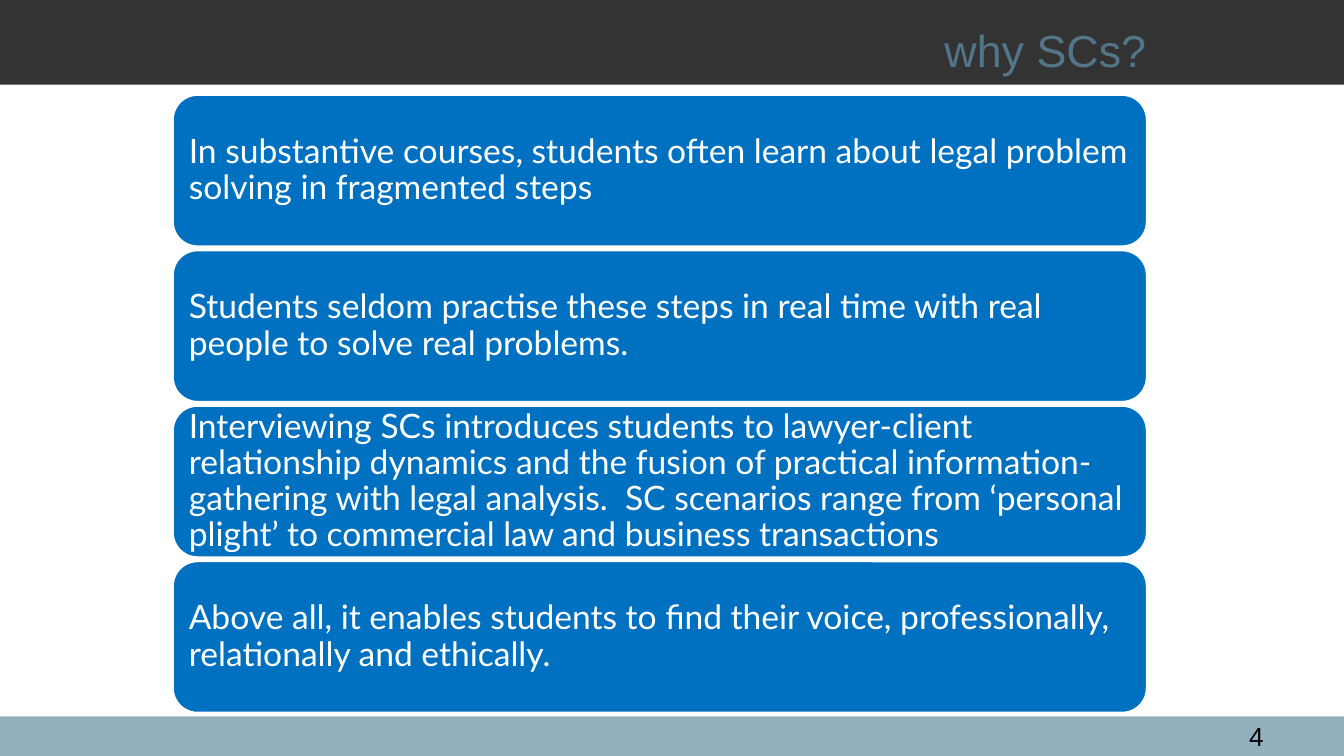
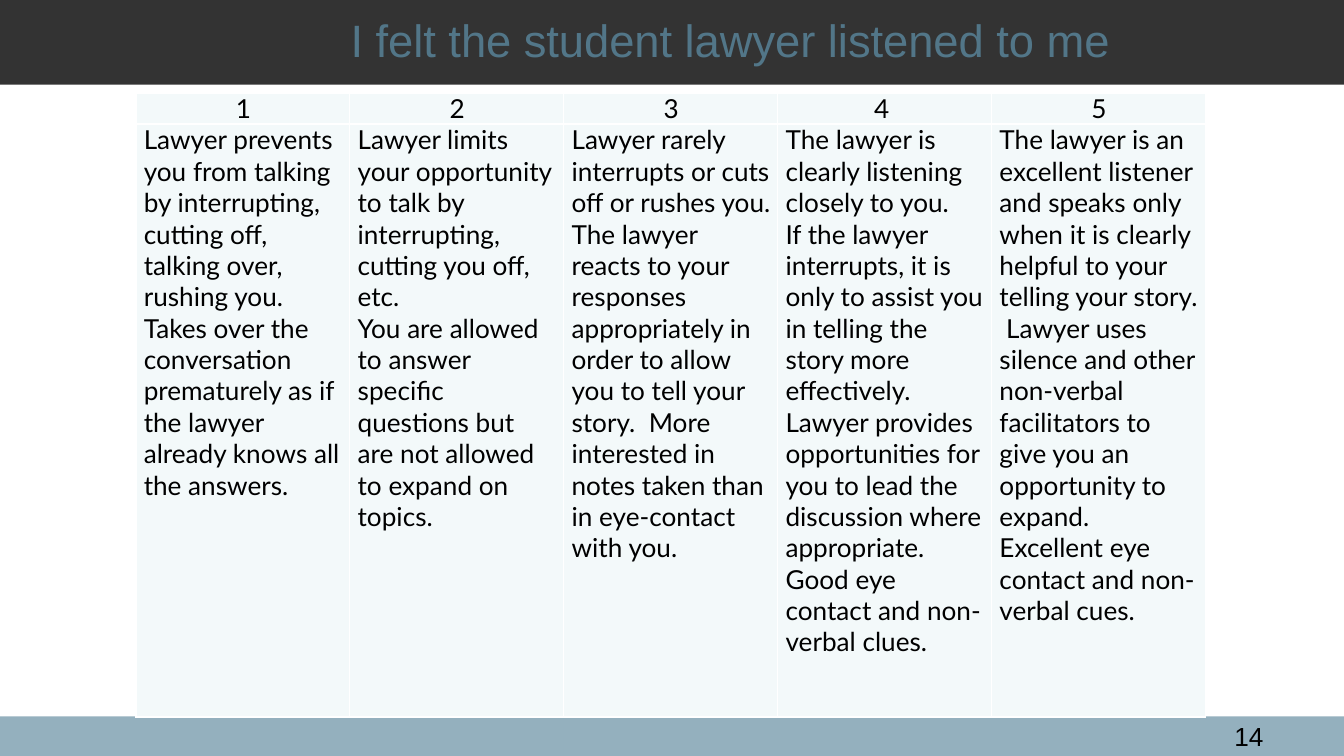
from lxml import etree
from pptx import Presentation
from pptx.dml.color import RGBColor
from pptx.enum.shapes import MSO_SHAPE
from pptx.enum.text import MSO_ANCHOR, MSO_AUTO_SIZE, PP_ALIGN
from pptx.oxml.ns import qn
from pptx.util import Inches, Pt

RECTANGLE, ROUNDED = MSO_SHAPE.RECTANGLE, MSO_SHAPE.ROUNDED_RECTANGLE
MIDDLE = MSO_ANCHOR.MIDDLE
LEFT, CENTER, RIGHT = PP_ALIGN.LEFT, PP_ALIGN.CENTER, PP_ALIGN.RIGHT

WIDTH = 10
HEIGHT = WIDTH * 9 / 16
TITLE_ONLY = 5
TITLE_FONT, BODY_FONT = "Arial", "Lato"
HEADER, FOOTER, TITLE = "333333", "94B0BE", "527688"
CARD, CELL, WHITE, BLACK = "0070C0", "F3F9FA", "FFFFFF", "000000"

REASONS = [
    "In substantive courses, students often learn about legal problem solving in fragmented steps",
    "Students seldom practise these steps in real time with real people to solve real problems.",
    "Interviewing SCs introduces students to lawyer-client relationship dynamics and the fusion of "
    "practical information-gathering with legal analysis.  SC scenarios range from ‘personal plight’ "
    "to commercial law and business transactions",
    "Above all, it enables students to find their voice, professionally, relationally and ethically.",
]

RATINGS = [
    ("1", ["Lawyer prevents you from talking by interrupting, cutting off, talking over, rushing you.",
           "Takes over the conversation prematurely as if the lawyer already knows all the answers."]),
    ("2", ["Lawyer limits your opportunity to talk by interrupting, cutting you off, etc.",
           "You are allowed to answer specific questions but are not allowed to expand on topics."]),
    ("3", ["Lawyer rarely interrupts or cuts off or rushes you.",
           "The lawyer reacts to your responses appropriately in order to allow you to tell your story.  "
           "More interested in notes taken than in eye-contact with you."]),
    ("4 ", ["The lawyer is clearly listening closely to you.",
            "If the lawyer interrupts, it is only to assist you in telling the story more effectively.",
            "Lawyer provides opportunities for you to lead the discussion where appropriate.",
            "Good eye contact and non-verbal clues."]),
    ("5", ["The lawyer is an excellent listener and speaks only when it is clearly helpful to your "
           "telling your story.  Lawyer uses silence and other non-verbal facilitators to give you an "
           "opportunity to expand.",
           "Excellent eye contact and non-verbal cues."]),
]


def color(value):
    return RGBColor.from_string(value)


def inches(box):
    return [Inches(length) for length in box]


def write(frame, text, font, size, ink, align=LEFT):
    frame.text = text
    for para in frame.paragraphs:
        para.alignment = align
        for span in para.runs:
            span.font.name = font
            span.font.size = Pt(size)
            span.font.bold = False
            span.font.color.rgb = color(ink)


def add_block(page, kind, box, fill):
    block = page.shapes.add_shape(kind, *inches(box))
    block.shadow.inherit = False
    block.fill.solid()
    block.fill.fore_color.rgb = color(fill)
    block.line.fill.background()
    return block


def add_layout_bands(layout, page):
    """Draw the header and footer bands, then move them behind everything on the layout."""
    footer_top = 5.33
    bands = [((0, footer_top, WIDTH, HEIGHT - footer_top), FOOTER), ((0, 0, WIDTH, 0.63), HEADER)]
    for index, (box, fill) in enumerate(bands):
        element = add_block(page, RECTANGLE, box, fill)._element
        element.nvSpPr.cNvPr.set("id", str(100 + index))
        layout.shapes._spTree.insert(2 + index, element)


def add_page(deck, title, title_box, title_size, number):
    page = deck.slides.add_slide(deck.slide_layouts[TITLE_ONLY])
    heading = page.shapes.title
    heading.left, heading.top, heading.width, heading.height = inches(title_box)
    frame = heading.text_frame
    write(frame, title, TITLE_FONT, title_size, TITLE, RIGHT)
    frame.vertical_anchor = MIDDLE
    frame.auto_size = MSO_AUTO_SIZE.NONE
    frame.word_wrap = True

    number_box = page.shapes.add_textbox(*inches((8.86, 5.31, 0.64, 0.18)))
    number_box.text_frame.word_wrap = True
    write(number_box.text_frame, number, TITLE_FONT, 14, BLACK, RIGHT)
    return page


def add_cards(page, box, texts, card_height=1.14):
    left, top, width, height = box
    pitch = (height - card_height) / (len(texts) - 1)
    for index, text in enumerate(texts):
        card = add_block(page, ROUNDED, (left, top + index * pitch, width, card_height), CARD)
        card.line.color.rgb = color(WHITE)
        card.line.width = Pt(2)
        frame = card.text_frame
        frame.word_wrap = True
        frame.vertical_anchor = MIDDLE
        frame.margin_left = frame.margin_right = Inches(0.07)
        frame.margin_top = frame.margin_bottom = Inches(0.07)
        write(frame, text, BODY_FONT, 18, WHITE)
        frame.paragraphs[0].line_spacing = 0.9


def add_borders(cell, ink, points):
    properties = cell._tc.get_or_add_tcPr()
    for side in ("lnL", "lnR", "lnT", "lnB"):
        line = etree.SubElement(properties, qn(f"a:{side}"), w=str(Pt(points)))
        fill = etree.SubElement(line, qn("a:solidFill"))
        etree.SubElement(fill, qn("a:srgbClr"), val=ink)


def fill_cell(cell, text, align):
    cell.margin_left, cell.margin_right = Inches(0.06), Inches(0.05)
    cell.margin_top = cell.margin_bottom = 0
    add_borders(cell, WHITE, 1)
    cell.fill.solid()
    cell.fill.fore_color.rgb = color(CELL)
    write(cell.text_frame, text, BODY_FONT, 14, BLACK, align)


def add_rating_table(page, box, ratings, head_height=0.23):
    table = page.shapes.add_table(2, len(ratings), *inches(box)).table
    table.first_row = table.horz_banding = False
    table.rows[0].height = Inches(head_height)
    table.rows[1].height = Inches(box[3] - head_height)
    for index, (score, descriptions) in enumerate(ratings):
        table.columns[index].width = Inches(box[2] / len(ratings))
        fill_cell(table.cell(0, index), score, CENTER)
        fill_cell(table.cell(1, index), "\n".join(descriptions), LEFT)


def main():
    deck = Presentation()
    deck.slide_width, deck.slide_height = inches((WIDTH, HEIGHT))

    reasons_page = add_page(deck, "why SCs? ", (2.72, -0.1, 6, 0.94), 24, "4")
    add_layout_bands(deck.slide_layouts[TITLE_ONLY], reasons_page)
    add_cards(reasons_page, (1.28, 0.7, 7.26, 4.61), REASONS)

    rating_page = add_page(deck, "I felt the student lawyer listened to me",
                           (1.63, 0.03, 6.73, 0.52), 24.3, "14")
    add_rating_table(rating_page, (1.01, 0.69, 7.96, 4.64), RATINGS)

    deck.save("out.pptx")


if __name__ == "__main__":
    main()
